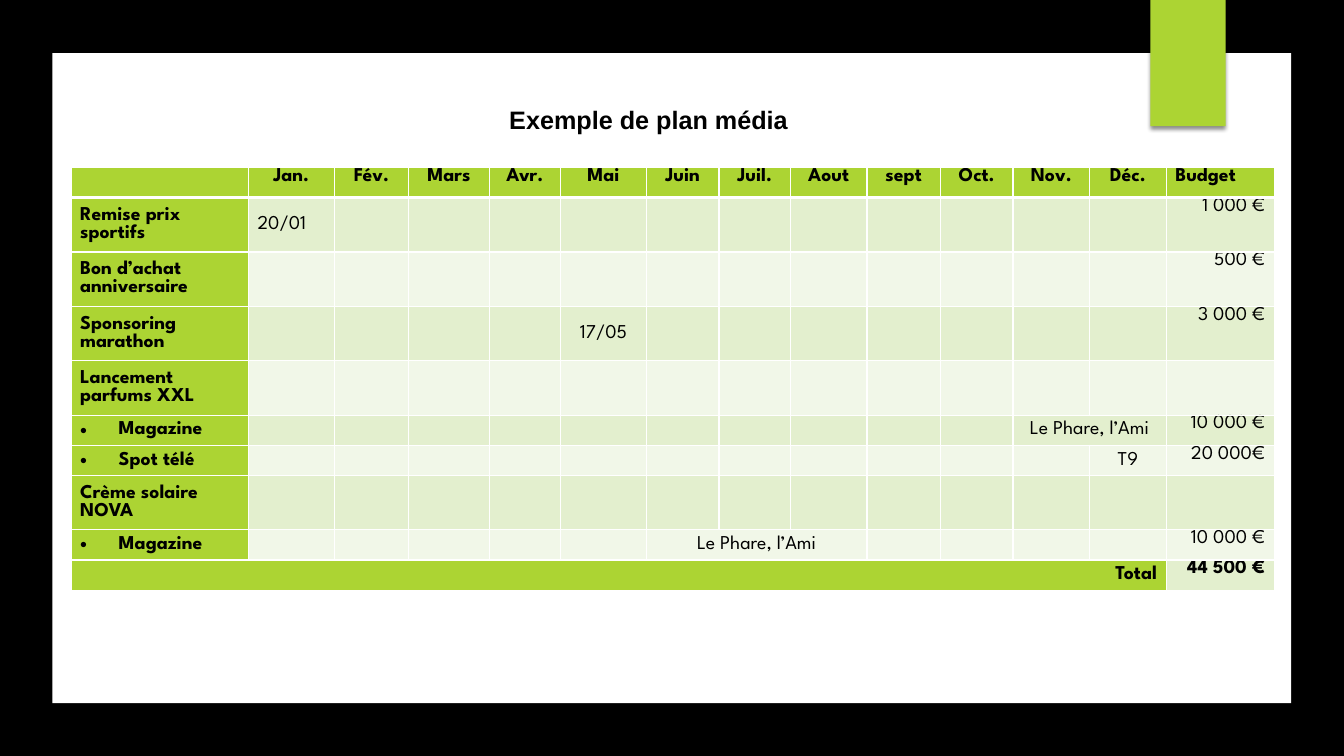
from dataclasses import dataclass

from lxml.etree import SubElement
from pptx import Presentation
from pptx.dml.color import RGBColor
from pptx.enum.shapes import MSO_SHAPE
from pptx.enum.text import MSO_ANCHOR, MSO_AUTO_SIZE, PP_ALIGN
from pptx.oxml.ns import qn
from pptx.util import Cm, Pt


@dataclass(frozen=True)
class Theme:
    black: str = "000000"
    white: str = "FFFFFF"
    green: str = "ACD433"
    band_dark: str = "E3EFCE"
    band_light: str = "F1F7E8"
    title_font: str = "Arial"
    table_font: str = "League Spartan"
    title_size: int = 18
    table_size: int = 14
    thin_border: int = 1
    thick_border: int = 3


THEME = Theme()

COLUMN_WIDTHS = [4.47, 2.16, 1.88, 2.03, 1.8, 2.16, 1.83, 1.8, 1.93, 1.85, 1.83, 1.93, 1.93, 2.72]
SHORT_ROW, TALL_ROW = 0.76, 1.37
HEADINGS = ["", "Jan.", "Fév.", "Mars", "Avr.", "Mai", "Juin", "Juil.", "Aout", "sept",
            "Oct.", "Nov.", "Déc.", "Budget"]
BUDGET = len(HEADINGS) - 1

# Label, bulleted, (first month, last month, text) or None, budget
CAMPAIGNS = [
    ("Remise prix sportifs", False, (1, 1, "20/01"), "1 000 €"),
    ("Bon d’achat anniversaire", False, None, "500 €"),
    ("Sponsoring marathon", False, (5, 5, "17/05"), "3 000 €"),
    ("Lancement parfums XXL", False, None, ""),
    ("Magazine", True, (11, 12, "Le Phare, l’Ami"), "10 000 €"),
    ("Spot télé", True, (12, 12, "T9"), "20 000€"),
    ("Crème solaire NOVA", False, None, ""),
    ("Magazine", True, (6, 8, "Le Phare, l’Ami"), "10 000 €"),
]
TOTAL = "44 500 €"


def apply_format(target, values):
    for name, value in values.items():
        setattr(target, name, value)


def paint(fill, color):
    fill.solid()
    fill.fore_color.rgb = RGBColor.from_string(color)


def write(paragraph, text, font_name, size, bold):
    run = paragraph.add_run()
    run.text = text
    apply_format(run.font, {"name": font_name, "size": Pt(size), "bold": bold})
    run.font.color.rgb = RGBColor.from_string(THEME.black)


def add_block(slide, box, color):
    shape = slide.shapes.add_shape(MSO_SHAPE.RECTANGLE, *map(Cm, box))
    shape.shadow.inherit = False
    paint(shape.fill, color)
    shape.line.fill.background()
    return shape


def add_ribbon(slide, box):
    ribbon = add_block(slide, box, THEME.green)
    effects = ribbon.element.spPr.find(qn("a:effectLst"))
    shadow = SubElement(effects, qn("a:outerShdw"), blurRad=str(Pt(3)), dist=str(Pt(2)),
                        dir="5400000", rotWithShape="0")
    color = SubElement(shadow, qn("a:srgbClr"), val=THEME.black)
    SubElement(color, qn("a:alpha"), val="45000")


def add_title(slide, box):
    title = slide.shapes.title
    left, top, width, height = map(Cm, box)
    apply_format(title, {"left": left, "top": top, "width": width, "height": height})
    apply_format(title.text_frame, {"word_wrap": False, "auto_size": MSO_AUTO_SIZE.NONE,
                                    "vertical_anchor": MSO_ANCHOR.MIDDLE})
    paragraph = title.text_frame.paragraphs[0]
    paragraph.alignment = PP_ALIGN.CENTER
    write(paragraph, "Exemple de plan média", THEME.title_font, THEME.title_size, True)
    # Bring the title in front of the white panel
    title.element.getparent().append(title.element)


def style_cell(cell, row, color):
    properties = cell._tc.get_or_add_tcPr()
    thick_side = {0: "lnB", 1: "lnT"}.get(row)
    for side in ("lnL", "lnR", "lnT", "lnB"):
        width = THEME.thick_border if side == thick_side else THEME.thin_border
        line = SubElement(properties, qn(f"a:{side}"), w=str(Pt(width)))
        SubElement(SubElement(line, qn("a:solidFill")), qn("a:srgbClr"), val=THEME.white)
    paint(cell.fill, color)
    apply_format(cell, {"margin_left": Cm(0.23), "margin_right": Cm(0.23),
                        "margin_top": 0, "margin_bottom": 0})
    # Keep empty cells from stretching their row
    SubElement(cell.text_frame.paragraphs[0]._p, qn("a:endParaRPr"),
               sz=str(THEME.table_size * 100))


def fill_cell(cell, text, alignment=PP_ALIGN.LEFT, anchor=MSO_ANCHOR.MIDDLE, bold=True,
              bulleted=False):
    if not text:
        return
    cell.vertical_anchor = anchor
    paragraph = cell.text_frame.paragraphs[0]
    paragraph.alignment = alignment
    if bulleted:
        properties = paragraph._p.get_or_add_pPr()
        properties.set("marL", str(Cm(0.97)))
        properties.set("indent", str(-Cm(0.97)))
        SubElement(properties, qn("a:buFont"), typeface=THEME.title_font)
        SubElement(properties, qn("a:buChar"), char="•")
    write(paragraph, text, THEME.table_font, THEME.table_size, bold)


def add_media_plan(slide, left, top):
    total_row = len(CAMPAIGNS) + 1
    heights = [SHORT_ROW]
    heights += [SHORT_ROW if bulleted else TALL_ROW for _, bulleted, _, _ in CAMPAIGNS]
    heights += [SHORT_ROW]
    table = slide.shapes.add_table(len(heights), len(COLUMN_WIDTHS), Cm(left), Cm(top),
                                   Cm(sum(COLUMN_WIDTHS)), Cm(sum(heights))).table
    for column, width in zip(table.columns, COLUMN_WIDTHS):
        column.width = Cm(width)
    for row, height in zip(table.rows, heights):
        row.height = Cm(height)

    # Green header, label column and total; banded body
    for row in range(len(heights)):
        for column in range(len(COLUMN_WIDTHS)):
            green = row == 0 or column == 0 or (row == total_row and column < BUDGET)
            band = THEME.band_dark if row % 2 else THEME.band_light
            style_cell(table.cell(row, column), row, THEME.green if green else band)

    # Header
    for column, heading in enumerate(HEADINGS):
        alignment = PP_ALIGN.LEFT if column == BUDGET else PP_ALIGN.CENTER
        fill_cell(table.cell(0, column), heading, alignment, MSO_ANCHOR.TOP)

    # Campaigns
    for row, (label, bulleted, slot, budget) in enumerate(CAMPAIGNS, start=1):
        fill_cell(table.cell(row, 0), label, bulleted=bulleted)
        if slot:
            first, last, text = slot
            if last > first:
                table.cell(row, first).merge(table.cell(row, last))
            alignment = PP_ALIGN.LEFT if first == 1 else PP_ALIGN.CENTER
            fill_cell(table.cell(row, first), text, alignment, bold=False)
        fill_cell(table.cell(row, BUDGET), budget, PP_ALIGN.RIGHT, MSO_ANCHOR.TOP, bold=False)

    # Total
    table.cell(total_row, 0).merge(table.cell(total_row, BUDGET - 1))
    fill_cell(table.cell(total_row, 0), "Total", PP_ALIGN.RIGHT)
    fill_cell(table.cell(total_row, BUDGET), TOTAL, PP_ALIGN.RIGHT, MSO_ANCHOR.TOP)


def main():
    presentation = Presentation()
    apply_format(presentation, {"slide_width": Cm(33.87), "slide_height": Cm(19.05)})
    slide = presentation.slides.add_slide(presentation.slide_layouts[5])
    paint(slide.background.fill, THEME.black)
    add_block(slide, (1.32, 1.34, 31.22, 16.38), THEME.white)
    add_ribbon(slide, (28.99, 0, 1.9, 3.18))
    add_media_plan(slide, 1.79, 4.22)
    add_title(slide, (12.55, 2.51, 7.59, 1.02))
    presentation.save("out.pptx")


if __name__ == "__main__":
    main()
